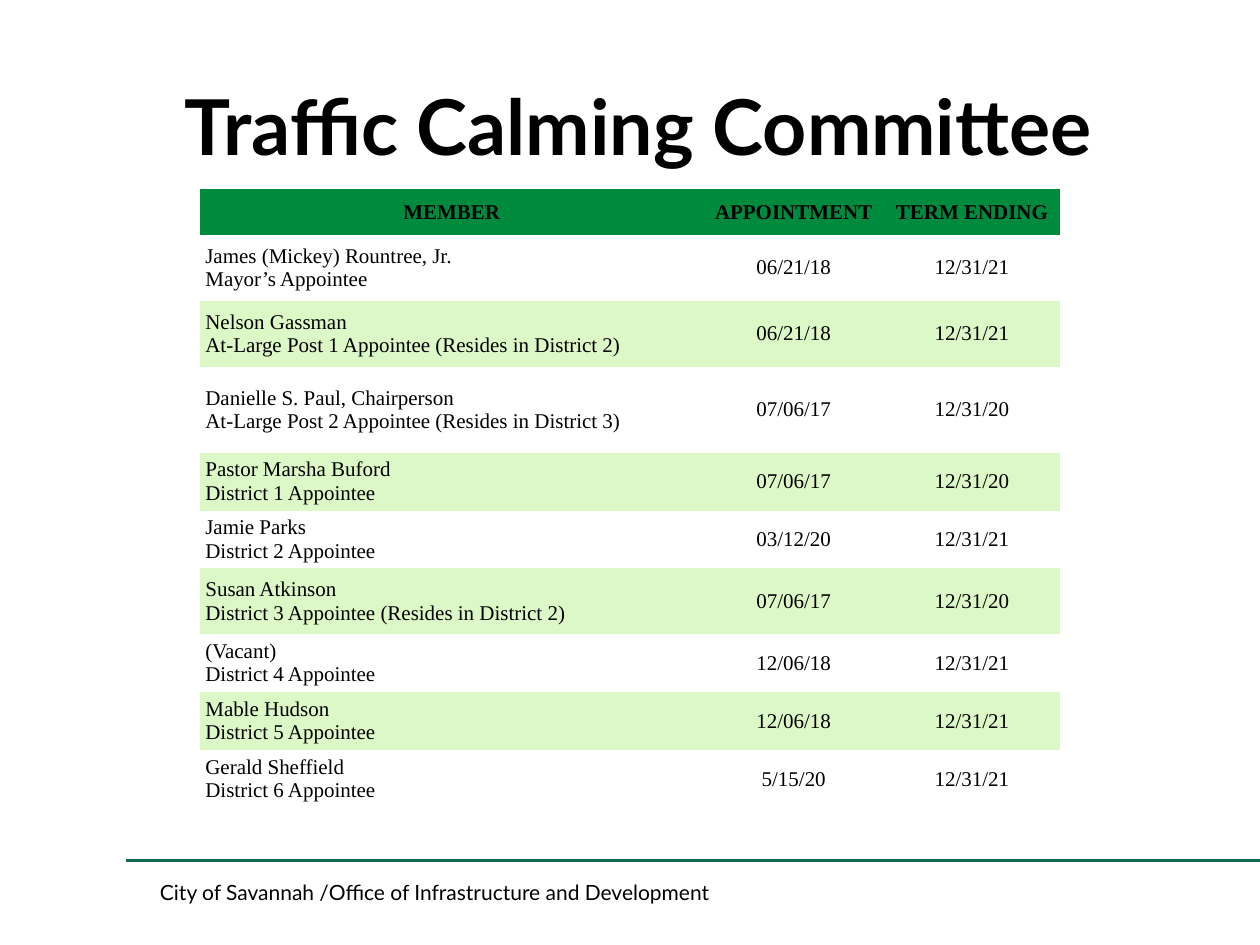
from copy import deepcopy
from dataclasses import dataclass
from typing import NamedTuple

from lxml.etree import SubElement
from pptx import Presentation
from pptx.dml.color import RGBColor
from pptx.enum.shapes import MSO_CONNECTOR
from pptx.enum.text import MSO_ANCHOR, MSO_AUTO_SIZE, PP_ALIGN
from pptx.oxml.ns import qn
from pptx.util import Emu, Inches, Pt

SLIDE_WIDTH, SLIDE_HEIGHT = Inches(10), Inches(7.5)
GRID_COLUMNS, GRID_ROWS = 40, 30


@dataclass(frozen=True)
class Theme:
    ink: RGBColor = RGBColor.from_string("000000")
    rule: RGBColor = RGBColor.from_string("13694E")
    header: RGBColor = RGBColor.from_string("008A3E")
    band: RGBColor = RGBColor.from_string("DDF8C7")
    heading_font: str = "Lato"
    table_font: str = "Times New Roman"
    title_size: Pt = Pt(44)
    text_size: Pt = Pt(12)
    rule_width: Pt = Pt(1.5)
    plain_table: str = "{2D5ABB26-0587-4C30-8999-92F81FD0307C}"


class Area(NamedTuple):
    column: float
    row: float
    columns: float
    rows: float


class Member(NamedTuple):
    name: str
    seat: str
    appointed: str
    term_end: str
    height: float


THEME = Theme()
TITLE_AREA = Area(3, 0, 34, 5)
FOOTER_AREA = Area(4, 27.32, 20, 2)
TABLE_START = (6.36, 6)
TABLE_COLUMNS = (15.96, 5.76, 5.56)
HEADER_HEIGHT = 1.46
SHORT, MEDIUM, TALL = 1.84, 2.09, 2.73
HEADINGS = ("MEMBER", "APPOINTMENT", "TERM ENDING")
MEMBERS = (
    Member("James (Mickey) Rountree, Jr.", "Mayor’s Appointee", "06/21/18", "12/31/21", MEDIUM),
    Member("Nelson Gassman", "At-Large Post 1 Appointee (Resides in District 2)",
           "06/21/18", "12/31/21", MEDIUM),
    Member("Danielle S. Paul, Chairperson", "At-Large Post 2 Appointee (Resides in District 3)",
           "07/06/17", "12/31/20", TALL),
    Member("Pastor Marsha Buford", "District 1 Appointee", "07/06/17", "12/31/20", SHORT),
    Member("Jamie Parks", "District 2 Appointee", "03/12/20", "12/31/21", SHORT),
    Member("Susan Atkinson", "District 3 Appointee (Resides in District 2)",
           "07/06/17", "12/31/20", MEDIUM),
    Member("(Vacant)", "District 4 Appointee", "12/06/18", "12/31/21", SHORT),
    Member("Mable Hudson", "District 5 Appointee", "12/06/18", "12/31/21", SHORT),
    Member("Gerald Sheffield", "District 6 Appointee", "5/15/20", "12/31/21", SHORT),
)
HEADING_FORMAT = {"name": THEME.heading_font, "size": THEME.title_size, "bold": True}
FOOTER_FORMAT = {"name": THEME.heading_font, "size": THEME.text_size, "bold": False}
MEMBER_FORMAT = {"name": THEME.table_font, "size": THEME.text_size, "bold": False}
COLUMN_FORMAT = MEMBER_FORMAT | {"bold": True}


def across(columns: float) -> Emu:
    return Emu(round(SLIDE_WIDTH * columns / GRID_COLUMNS))


def down(rows: float) -> Emu:
    return Emu(round(SLIDE_HEIGHT * rows / GRID_ROWS))


def bounds(area: Area) -> tuple:
    return across(area.column), down(area.row), across(area.columns), down(area.rows)


def apply(target, values: dict) -> None:
    for attribute, value in values.items():
        setattr(target, attribute, value)


def margins(left: float, top: float, right: float, bottom: float) -> dict:
    return {"margin_left": across(left), "margin_top": down(top),
            "margin_right": across(right), "margin_bottom": down(bottom)}


def write(frame, wording: str, font_format: dict, alignment: PP_ALIGN) -> None:
    frame.text = wording
    paragraph = frame.paragraphs[0]
    paragraph.alignment = alignment
    for run in paragraph.runs:
        apply(run.font, font_format)
        run.font.color.rgb = THEME.ink
    for line_break in paragraph._p.findall(qn("a:br")):
        line_break.insert(0, deepcopy(paragraph.runs[0]._r.get_or_add_rPr()))


def draw_title(slide, wording: str) -> None:
    title = slide.shapes.title
    apply(title, dict(zip(("left", "top", "width", "height"), bounds(TITLE_AREA))))
    apply(title.text_frame, margins(0.96, 2.93, 0.4, 0) | {
        "word_wrap": True, "auto_size": MSO_AUTO_SIZE.NONE,
        "vertical_anchor": MSO_ANCHOR.MIDDLE})
    write(title.text_frame, wording, HEADING_FORMAT, PP_ALIGN.CENTER)


def draw_footer(slide, wording: str) -> None:
    level = down(FOOTER_AREA.row)
    rule = slide.shapes.add_connector(
        MSO_CONNECTOR.STRAIGHT, across(FOOTER_AREA.column), level, SLIDE_WIDTH, level)
    rule.line.color.rgb = THEME.rule
    rule.line.width = THEME.rule_width
    SubElement(rule._element.spPr, qn("a:effectLst"))
    frame = slide.shapes.add_textbox(*bounds(FOOTER_AREA)).text_frame
    apply(frame, margins(1.08, 0.2, 0.4, 0.2) | {
        "word_wrap": True, "vertical_anchor": MSO_ANCHOR.MIDDLE})
    write(frame, wording, FOOTER_FORMAT, PP_ALIGN.LEFT)


def fill_row(table, index: int, entries: tuple, font_format: dict,
             first_alignment: PP_ALIGN, background: RGBColor | None) -> None:
    for column, entry in enumerate(entries):
        cell = table.cell(index, column)
        apply(cell, margins(0.16, 0.08, 0.16, 0.08) | {"vertical_anchor": MSO_ANCHOR.MIDDLE})
        write(cell.text_frame, entry, font_format,
              PP_ALIGN.CENTER if column else first_alignment)
        if background is None:
            cell.fill.background()
        else:
            cell.fill.solid()
            cell.fill.fore_color.rgb = background


def draw_members(slide) -> None:
    heights = (HEADER_HEIGHT, *(member.height for member in MEMBERS))
    area = Area(*TABLE_START, sum(TABLE_COLUMNS), sum(heights))
    table = slide.shapes.add_table(len(heights), len(HEADINGS), *bounds(area)).table
    apply(table, {"first_row": False, "horz_banding": False})
    table._tbl.tblPr.find(qn("a:tableStyleId")).text = THEME.plain_table
    for column, width in zip(table.columns, TABLE_COLUMNS):
        column.width = across(width)
    for row, height in zip(table.rows, heights):
        row.height = down(height)
    fill_row(table, 0, HEADINGS, COLUMN_FORMAT, PP_ALIGN.CENTER, THEME.header)
    for index, member in enumerate(MEMBERS, start=1):
        entries = (f"{member.name}\v{member.seat}", member.appointed, member.term_end)
        background = None if index % 2 else THEME.band
        fill_row(table, index, entries, MEMBER_FORMAT, PP_ALIGN.LEFT, background)


def main() -> None:
    deck = Presentation()
    apply(deck, {"slide_width": SLIDE_WIDTH, "slide_height": SLIDE_HEIGHT})
    slide = deck.slides.add_slide(deck.slide_layouts.get_by_name("Title Only"))
    draw_title(slide, "Traffic Calming Committee")
    draw_footer(slide, "City of Savannah /Office of Infrastructure and Development")
    draw_members(slide)
    deck.save("out.pptx")


if __name__ == "__main__":
    main()
